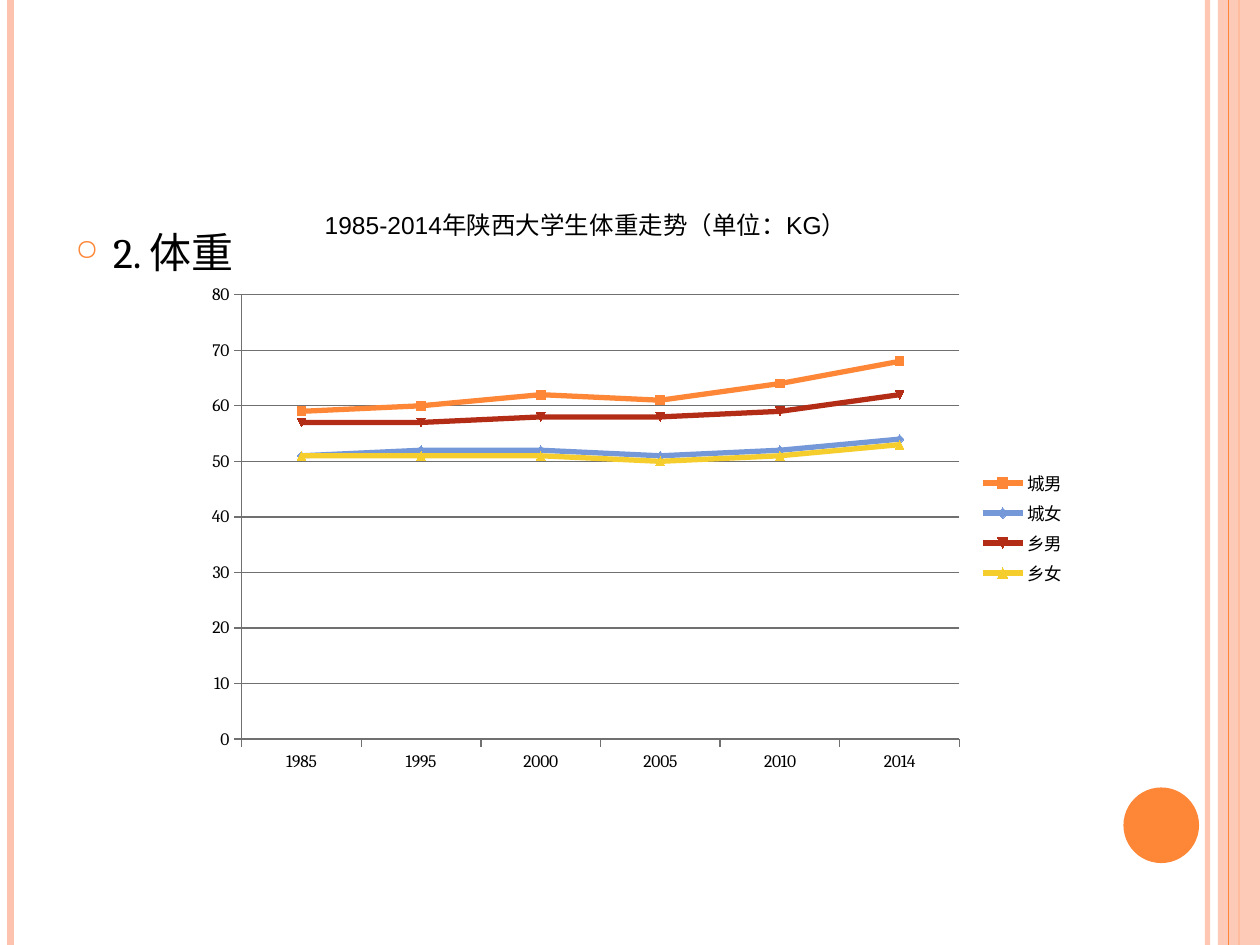
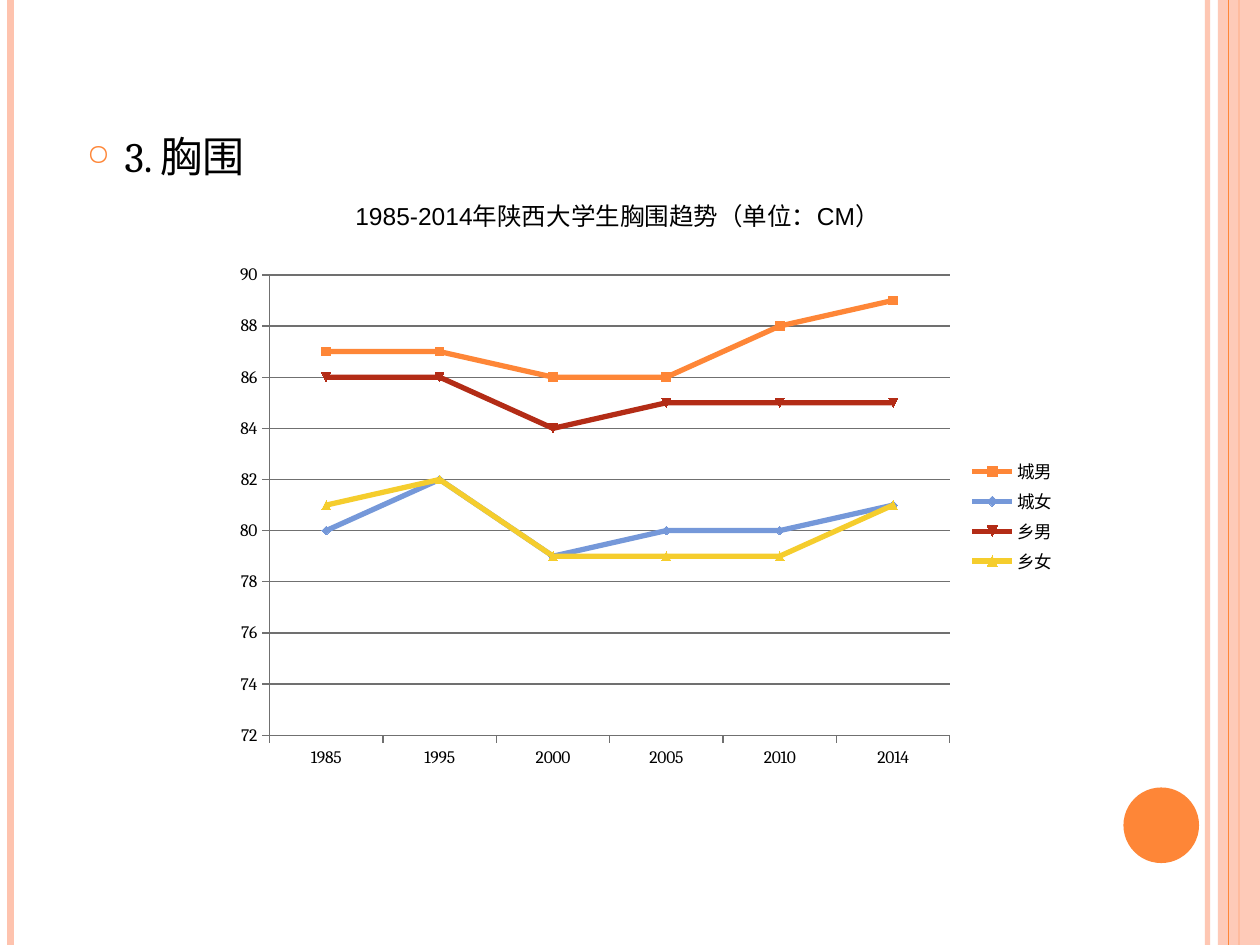
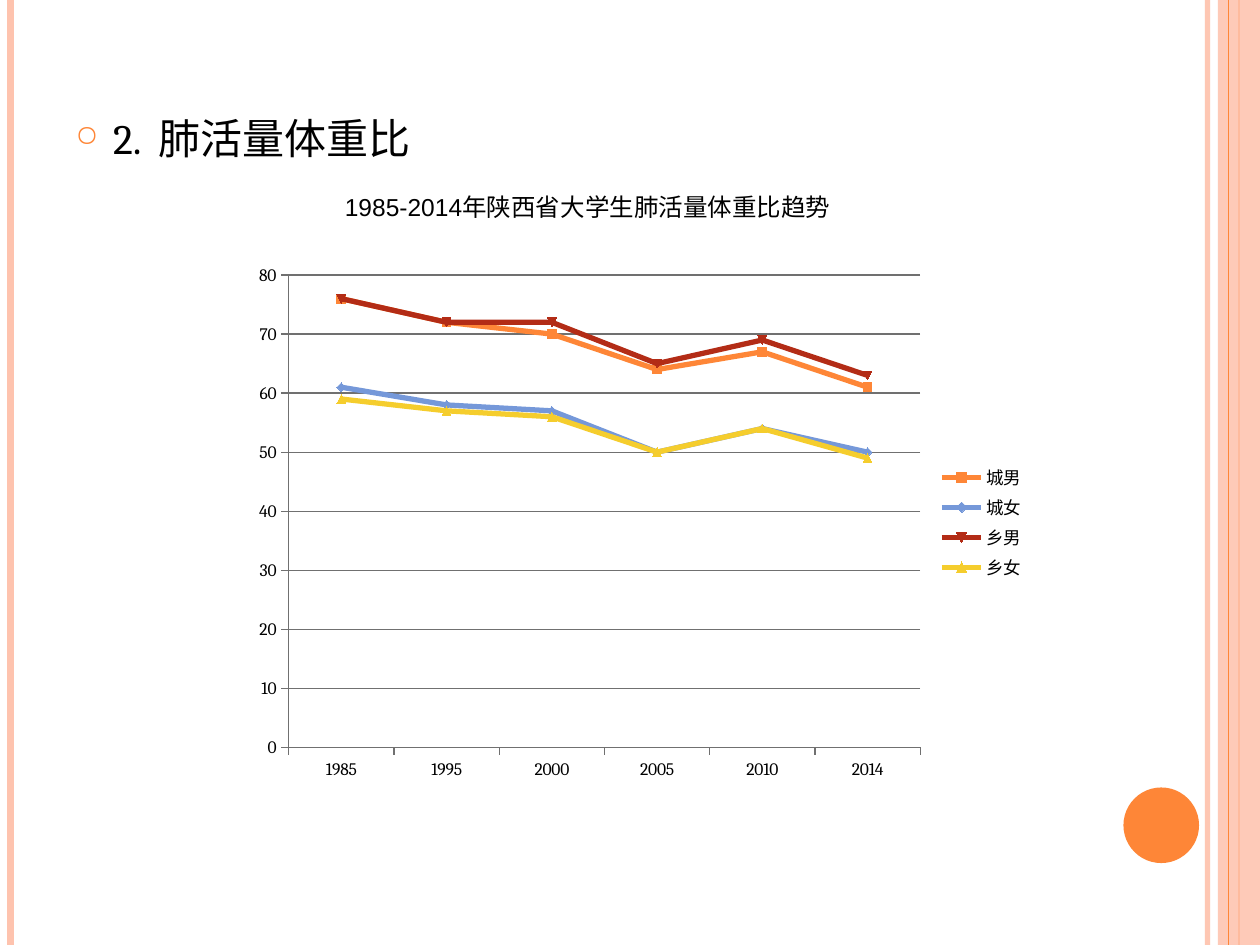
"""Builds three slides on the physical trends of students in Shaanxi."""
from pptx import Presentation
from pptx import util as u
from pptx.chart import data as chart_data
from pptx.dml import color
from pptx.enum import chart as chart_enum, shapes, text
from pptx.oxml import ns, xmlchemy
from lxml import etree

COLORS = {
    "black": "000000", "orange": "FE8637", "peach": "FEC3AE", "grid": "707070",
    "blue": "7598D9", "red": "B32C16", "yellow": "F5CD2D",
}
WIDTH, HEIGHT = 720, 540
HEADING_FONT, CAPTION_FONT = "Cambria", "Arial"
YEARS = ["1985", "1995", "2000", "2005", "2010", "2014"]
GROUPS = [("城男", "orange"), ("城女", "blue"), ("乡男", "red"), ("乡女", "yellow")]
BACK_STRIPES = [(690, 3, "peach", 93), (6, 4.5, "peach", 100), (708, 1.5, "orange", 100)]
FRONT_STRIPES = [(702, 0.75, "orange", 100)]
BAND = (696, 0, 24, HEIGHT)
DISC = (642, 450, 43.2, 43.2)

SLIDES = [
    {
        "heading": "2. 体重", "heading_box": (36, 126, 588, 384),
        "caption": "1985-2014年陕西大学生体重走势（单位：KG）",
        "caption_box": (178.5, 116.5, 340, 27),
        "chart_box": (111, 157, 505, 289.5), "scale": (0, 80, 10),
        "values": [
            (59, 60, 62, 61, 64, 68),
            (51, 52, 52, 51, 52, 54),
            (57, 57, 58, 58, 59, 62),
            (51, 51, 51, 50, 51, 53),
        ],
    },
    {
        "heading": "3. 胸围", "heading_box": (42.5, 71.3, 588, 384),
        "caption": "1985-2014年陕西大学生胸围趋势（单位：CM）",
        "caption_box": (196, 111.6, 385, 24.5),
        "chart_box": (127.5, 145.5, 482.5, 299), "scale": (72, 90, 2),
        "values": [
            (87, 87, 86, 86, 88, 89),
            (80, 82, 79, 80, 80, 81),
            (86, 86, 84, 85, 85, 85),
            (81, 82, 79, 79, 79, 81),
        ],
    },
    {
        "heading": "2.  肺活量体重比", "heading_box": (36, 60.5, 588, 449.5),
        "caption": "1985-2014年陕西省大学生肺活量体重比趋势",
        "caption_box": (190, 106, 380, 24.5),
        "chart_box": (139, 145.5, 453.5, 306), "scale": (0, 80, 10),
        "values": [
            (76, 72, 70, 64, 67, 61),
            (61, 58, 57, 50, 54, 50),
            (76, 72, 72, 65, 69, 63),
            (59, 57, 56, 50, 54, 49),
        ],
    },
]


def points(box):
    return [u.Pt(length) for length in box]


def rgb(name):
    return color.RGBColor.from_string(COLORS[name])


def set_opacity(shape, percent):
    for element in shape._element.iter(ns.qn("a:srgbClr")):
        etree.SubElement(element, ns.qn("a:alpha")).set("val", str(percent * 1000))


def set_font(font, name, size):
    font.name, font.size = name, u.Pt(size)
    font.color.rgb = rgb("black")


def add_bullet(paragraph):
    properties = paragraph._p.get_or_add_pPr()
    indent = u.Pt(21.6)
    properties.set("marL", str(indent))
    properties.set("indent", str(-indent))
    bullet_color = etree.SubElement(properties, ns.qn("a:buClr"))
    etree.SubElement(bullet_color, ns.qn("a:srgbClr")).set("val", COLORS["orange"])
    etree.SubElement(properties, ns.qn("a:buSzPct")).set("val", "70000")
    etree.SubElement(properties, ns.qn("a:buChar")).set("char", "○")


def add_text(slide, content, box, font=CAPTION_FONT, size=14, bullet=False):
    frame = slide.shapes.add_textbox(*points(box)).text_frame
    frame.word_wrap = True
    frame.vertical_anchor = text.MSO_ANCHOR.TOP
    paragraph = frame.paragraphs[0]
    if bullet:
        add_bullet(paragraph)
    run = paragraph.add_run()
    run.text = content
    set_font(run.font, font, size)


def add_stripes(slide, stripes):
    for x, width, name, opacity in stripes:
        stripe = slide.shapes.add_connector(
            shapes.MSO_CONNECTOR.STRAIGHT, *points((x, 0, x, HEIGHT)))
        stripe.line.width = u.Pt(width)
        stripe.line.color.rgb = rgb(name)
        etree.SubElement(stripe._element.spPr, ns.qn("a:effectLst"))
        if opacity < 100:
            set_opacity(stripe, opacity)


def add_solid(slide, kind, box, name):
    shape = slide.shapes.add_shape(kind, *points(box))
    shape.shadow.inherit = False
    shape.fill.solid()
    shape.fill.fore_color.rgb = rgb(name)
    shape.line.fill.background()
    return shape


def add_decoration(slide):
    add_stripes(slide, BACK_STRIPES)
    band = add_solid(slide, shapes.MSO_SHAPE.RECTANGLE, BAND, "peach")
    set_opacity(band, 87)
    add_stripes(slide, FRONT_STRIPES)
    add_solid(slide, shapes.MSO_SHAPE.OVAL, DISC, "orange")


def style_line(line, name, width):
    line.color.rgb = rgb(name)
    line.width = u.Pt(width)


def add_trend_chart(slide, box, values, scale):
    data = chart_data.CategoryChartData()
    data.categories = YEARS
    for (group, _), numbers in zip(GROUPS, values):
        data.add_series(group, numbers)
    chart = slide.shapes.add_chart(
        chart_enum.XL_CHART_TYPE.LINE_MARKERS, *points(box), data).chart
    set_font(chart.font, HEADING_FONT, 10)
    chart.has_title = False
    chart.has_legend = True
    chart.legend.position = chart_enum.XL_LEGEND_POSITION.RIGHT
    chart.legend.include_in_layout = False
    set_font(chart.legend.font, HEADING_FONT, 10)

    for axis in (chart.category_axis, chart.value_axis):
        axis.major_tick_mark = chart_enum.XL_TICK_MARK.OUTSIDE
        style_line(axis.format.line, "grid", 0.75)
        set_font(axis.tick_labels.font, HEADING_FONT, 10)
    axis = chart.value_axis
    axis.minimum_scale, axis.maximum_scale, axis.major_unit = scale
    axis.has_major_gridlines = True
    style_line(axis.major_gridlines.format.line, "grid", 0.75)

    plot = chart.plots[0]
    plot.vary_by_categories = False
    for series, (_, name) in zip(plot.series, GROUPS):
        series.smooth = False
        style_line(series.format.line, name, 3)
        series.marker.format.fill.solid()
        series.marker.format.fill.fore_color.rgb = rgb(name)
        style_line(series.marker.format.line, name, 0.75)


def main():
    presentation = Presentation()
    presentation.slide_width, presentation.slide_height = points((WIDTH, HEIGHT))
    for content in SLIDES:
        slide = presentation.slides.add_slide(presentation.slide_layouts[6])
        add_decoration(slide)
        add_text(slide, content["heading"], content["heading_box"],
                 font=HEADING_FONT, size=24, bullet=True)
        add_trend_chart(slide, content["chart_box"], content["values"], content["scale"])
        add_text(slide, content["caption"], content["caption_box"])
    presentation.save("out.pptx")


if __name__ == "__main__":
    main()
